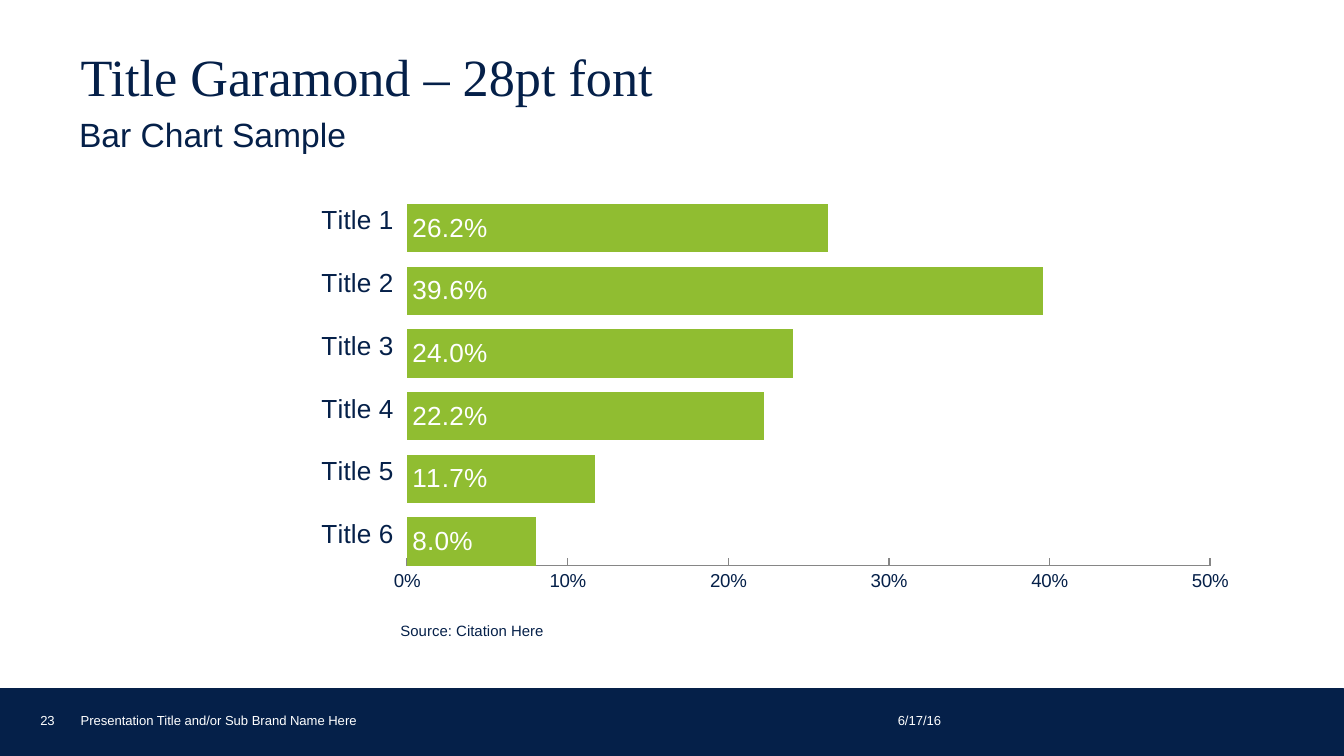
from lxml import etree
from pptx import Presentation
from pptx.chart.data import CategoryChartData
from pptx.dml.color import RGBColor
from pptx.enum.chart import XL_CHART_TYPE, XL_LABEL_POSITION, XL_TICK_MARK
from pptx.enum.shapes import MSO_SHAPE
from pptx.enum.text import MSO_ANCHOR, PP_ALIGN
from pptx.oxml import parse_xml
from pptx.oxml.ns import nsdecls
from pptx.util import Inches, Pt

BAR = XL_CHART_TYPE.BAR_CLUSTERED
INSIDE_BASE = XL_LABEL_POSITION.INSIDE_BASE
TICK_IN, TICK_OUT, TICK_NONE = XL_TICK_MARK.INSIDE, XL_TICK_MARK.OUTSIDE, XL_TICK_MARK.NONE
RECT = MSO_SHAPE.RECTANGLE
TOP, BOTTOM = MSO_ANCHOR.TOP, MSO_ANCHOR.BOTTOM
LEFT = PP_ALIGN.LEFT

NAVY = RGBColor(0x05, 0x20, 0x49)
GREEN = RGBColor(0x90, 0xBD, 0x31)
BLUE = RGBColor(0x17, 0x8C, 0xCB)
GREY = RGBColor(0x86, 0x86, 0x86)
WHITE = RGBColor(0xFF, 0xFF, 0xFF)
SERIF, SANS = "Times New Roman", "Arial"

SLIDE_W = 10
SLIDE_H = SLIDE_W * 9 / 16
SHARES = [0.08, 0.117, 0.222, 0.24, 0.396, 0.262]
PLOT = {"x": 0.106, "y": 0.069, "w": 0.813, "h": 0.841}


def set_font(font, size, color=NAVY, name=SANS):
    """Set the size, colour and typeface of a font."""
    font.size, font.name, font.bold = Pt(size), name, False
    font.color.rgb = color


def write(sp, text, size, color=NAVY, name=SANS, anchor=TOP, inset=(0, 0), spacing=1.0):
    """Put one formatted line of text in a shape."""
    tf = sp.text_frame
    tf.word_wrap = True
    tf.vertical_anchor = anchor
    tf.margin_left = tf.margin_right = Inches(inset[0])
    tf.margin_top = tf.margin_bottom = Inches(inset[1])
    p = tf.paragraphs[0]
    p.alignment, p.line_spacing = LEFT, spacing
    r = p.add_run()
    r.text = text
    set_font(r.font, size, color, name)


def add_text(s, x, y, w, h, text, size, **fmt):
    """Add a text box with one formatted line."""
    sp = s.shapes.add_textbox(Inches(x), Inches(y), Inches(w), Inches(h))
    write(sp, text, size, **fmt)


def add_heading(s, x, y, w):
    """Place the title and the subtitle below it."""
    title = s.shapes.title
    title.left, title.top = Inches(x), Inches(y)
    title.width, title.height = Inches(w), Inches(0.62)
    write(title, "Title Garamond – 28pt font", 28, name=SERIF,
          inset=(0.1, 0.05), spacing=0.85)
    add_text(s, x - 0.01, y + 0.48, w, 0.31, "Bar Chart Sample", 18,
             inset=(0.1, 0.05), spacing=0.9)


def add_footer(s, x, y, w, h):
    """Draw the footer band with page number, name and date."""
    band = s.shapes.add_shape(RECT, Inches(x), Inches(y), Inches(w), Inches(h))
    band.shadow.inherit = False
    band.fill.solid()
    band.fill.fore_color.rgb = band.line.color.rgb = NAVY
    band.line.width = Pt(1.5)
    for left, width, text in (
        (0.3, 0.27, "23"),
        (0.6, 4.71, "Presentation Title and/or Sub Brand Name Here"),
        (6.68, 1.01, "6/17/16"),
    ):
        add_text(s, x + left, y + 0.16, width, 0.13, text, 7, color=WHITE, anchor=BOTTOM)


def set_plot_area(chart):
    """Fix the inner plot area as fractions of the chart."""
    layout = parse_xml(f"<c:layout {nsdecls('c')}><c:manualLayout/></c:layout>")
    settings = [("layoutTarget", "inner"), ("xMode", "edge"), ("yMode", "edge"), *PLOT.items()]
    for tag, value in settings:
        etree.SubElement(layout[0], f"{{{layout.nsmap['c']}}}{tag}", val=str(value))
    plot_area = chart.plots[0]._element.getparent()
    for old in plot_area.findall("c:layout", layout.nsmap):
        plot_area.remove(old)
    plot_area.insert(0, layout)


def add_bar_chart(s, x, y, w, h):
    """Place the bar chart and the source line below it."""
    data = CategoryChartData()
    data.categories = [f"Title {n}" for n in range(6, 0, -1)]
    data.add_series("Series 1", SHARES)
    data.add_series("Series 2", [None] * len(SHARES))
    chart = s.shapes.add_chart(BAR, Inches(x), Inches(y), Inches(w), Inches(h), data).chart
    chart.has_legend = chart.has_title = False
    set_font(chart.font, 18, name=SERIF)
    set_plot_area(chart)

    plot = chart.plots[0]
    plot.vary_by_categories = False
    plot.gap_width, plot.overlap = 0, 70
    for series, color in zip(plot.series, (GREEN, BLUE)):
        series.format.fill.solid()
        series.format.fill.fore_color.rgb = color
        series.invert_if_negative = False
    labels = plot.series[0].data_labels
    labels.show_value, labels.position = True, INSIDE_BASE
    labels.number_format, labels.number_format_is_linked = "0.0%", False
    set_font(labels.font, 14, WHITE)

    for axis, size, tick in ((chart.category_axis, 14, TICK_OUT), (chart.value_axis, 10, TICK_IN)):
        axis.has_major_gridlines = False
        axis.major_tick_mark, axis.minor_tick_mark = tick, TICK_NONE
        set_font(axis.tick_labels.font, size)
    chart.category_axis.format.line.fill.background()
    axis = chart.value_axis
    axis.minimum_scale, axis.maximum_scale, axis.major_unit = 0, 0.5, 0.1
    axis.tick_labels.number_format = "0%"
    axis.tick_labels.number_format_is_linked = False
    axis.format.line.color.rgb = GREY
    axis.format.line.width = Pt(0.75)

    add_text(s, x + 0.73, y + h + 0.13, 1.66, 0.12, "Source: Citation Here", 8, spacing=0.9)


def main():
    """Build the slide and save it."""
    prs = Presentation()
    prs.slide_width, prs.slide_height = Inches(SLIDE_W), Inches(SLIDE_H)
    s = prs.slides.add_slide(prs.slide_layouts[5])
    add_footer(s, 0, 5.13, SLIDE_W, 0.5)
    add_heading(s, 0.5, 0.35, 8.84)
    add_bar_chart(s, 2.25, 1.18, 7.35, 3.33)
    prs.save("out.pptx")


if __name__ == "__main__":
    main()
